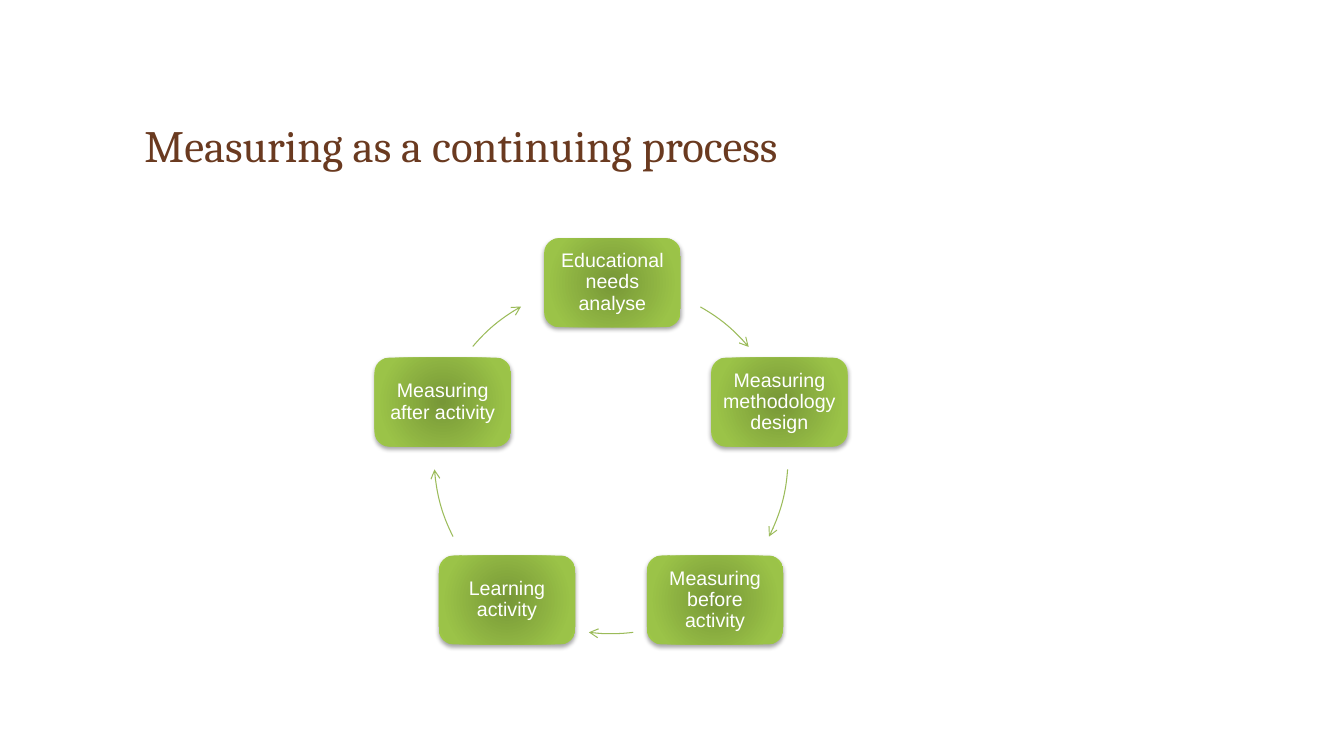
import math
from lxml import etree
from pptx import Presentation, util as u
from pptx.dml.color import RGBColor
from pptx.enum import shapes, text
from pptx.oxml import parse_xml
from pptx.oxml.ns import qn

W, H = u.Inches(13.33), u.Inches(7.5)
NS = 'xmlns:a="http://schemas.openxmlformats.org/drawingml/2006/main"'
GREENS = ((0, "779737"), (80, "9BC348"), (100, "9DC746"))
RING_X, RING_Y, RADIUS = 45.47, 60.43, 13.17
NODE_W, NODE_H = 10.16, 11.76
CENTRED = (0, 0)
RAISED_TOP = (0.1, 0.37)
# label, node offset, arrow start and end in degrees from the top, arrow offset
STEPS = (
    ("Educational needs analyse", RAISED_TOP, 29.4, 49.8, (0.18, 0.57)),
    ("Measuring methodology design", CENTRED, 94.1, 116.8, CENTRED),
    ("Measuring before activity", CENTRED, 172.8, 187.2, CENTRED),
    ("Learning activity", CENTRED, 243.2, 265.9, CENTRED),
    ("Measuring after activity", CENTRED, 310.2, 330.6, (-0.23, 0.52)),
)


def across(share):
    """Percent of the slide width as a length."""
    return u.Emu(round(W * share / 100))


def down(share):
    """Percent of the slide height as a length."""
    return u.Emu(round(H * share / 100))


def colour(code):
    return RGBColor.from_string(code)


def ring_centre(offset):
    return across(RING_X + offset[0]), down(RING_Y + offset[1])


def on_circle(x, y, r, degrees):
    """Point on a circle, clockwise from the top."""
    angle = math.radians(degrees)
    return round(x + r * math.sin(angle)), round(y - r * math.cos(angle))


def write(tf, words, *, size, font, color, align, anchor, spacing=None):
    tf.word_wrap = True
    tf.vertical_anchor = anchor
    p = tf.paragraphs[0]
    p.alignment = align
    p.line_spacing = spacing
    r = p.add_run()
    r.text = words
    r.font.size, r.font.name = u.Pt(size), font
    r.font.color.rgb = colour(color)


def add_title(s, words):
    sp = s.shapes.title
    sp.left, sp.top = across(10), down(6.27)
    sp.width, sp.height = across(80), down(17.07)
    write(sp.text_frame, words, size=32, font="Cambria", color="6A3A20",
          align=text.PP_ALIGN.LEFT, anchor=text.MSO_ANCHOR.BOTTOM)


def paint_node(sp):
    """Radial green fill with a soft shadow below."""
    stops = "".join(f'<a:gs pos="{pos * 1000}"><a:srgbClr val="{code}"/></a:gs>'
                    for pos, code in GREENS)
    spPr = sp._element.spPr
    spPr.append(parse_xml(
        f'<a:gradFill {NS} rotWithShape="1"><a:gsLst>{stops}</a:gsLst>'
        '<a:path path="circle"><a:fillToRect l="50000" t="50000" r="50000" b="50000"/>'
        '</a:path></a:gradFill>'))
    sp.line.fill.background()
    spPr.append(parse_xml(
        f'<a:effectLst {NS}><a:outerShdw blurRad="{u.Pt(3.1)}" dist="{u.Pt(1.8)}" '
        'dir="5400000" rotWithShape="0"><a:srgbClr val="000000"><a:alpha val="35000"/>'
        '</a:srgbClr></a:outerShdw></a:effectLst>'))


def add_node(s, words, degrees, offset):
    x, y = on_circle(*ring_centre(offset), across(RADIUS), degrees)
    w, h = across(NODE_W), down(NODE_H)
    sp = s.shapes.add_shape(shapes.MSO_SHAPE.ROUNDED_RECTANGLE,
                            x - w // 2, y - h // 2, w, h)
    paint_node(sp)
    tf = sp.text_frame
    tf.margin_left = tf.margin_right = u.Inches(0.06)
    tf.margin_top = tf.margin_bottom = u.Inches(0.06)
    write(tf, words, size=14, font="Arial", color="FFFFFF", spacing=0.9,
          align=text.PP_ALIGN.CENTER, anchor=text.MSO_ANCHOR.MIDDLE)


def add_arc_arrow(s, start, end, offset):
    """Arrow along the ring, in a frame as large as the whole ring."""
    x, y = ring_centre(offset)
    r = across(RADIUS)
    frame = s.shapes.build_freeform(x - r, y - r)
    frame.add_line_segments([(x + r, y + r)], close=False)
    sp = frame.convert_to_shape()
    spPr = sp._element.spPr
    px, py = on_circle(r, r, r, start)
    outline = spPr.find(".//" + qn("a:path"))
    outline.getparent().replace(outline, parse_xml(
        f'<a:path {NS} w="{2 * r}" h="{2 * r}" fill="none">'
        f'<a:moveTo><a:pt x="{px}" y="{py}"/></a:moveTo>'
        f'<a:arcTo wR="{r}" hR="{r}" stAng="{round((start + 270) % 360 * 60000)}" '
        f'swAng="{round((end - start) * 60000)}"/></a:path>'))
    sp.shadow.inherit = False
    sp.fill.background()
    sp.line.color.rgb = colour("9BBB59")
    sp.line.width = u.Pt(0.75)
    etree.SubElement(spPr.find(qn("a:ln")), qn("a:tailEnd"), type="arrow")


def main():
    prs = Presentation()
    prs.slide_width, prs.slide_height = W, H
    s = prs.slides.add_slide(prs.slide_layouts[5])
    add_title(s, "Measuring as a continuing process")
    for i, (words, node_offset, start, end, arrow_offset) in enumerate(STEPS):
        add_node(s, words, i * 360 / len(STEPS), node_offset)
        add_arc_arrow(s, start, end, arrow_offset)
    prs.save("out.pptx")


if __name__ == "__main__":
    main()
